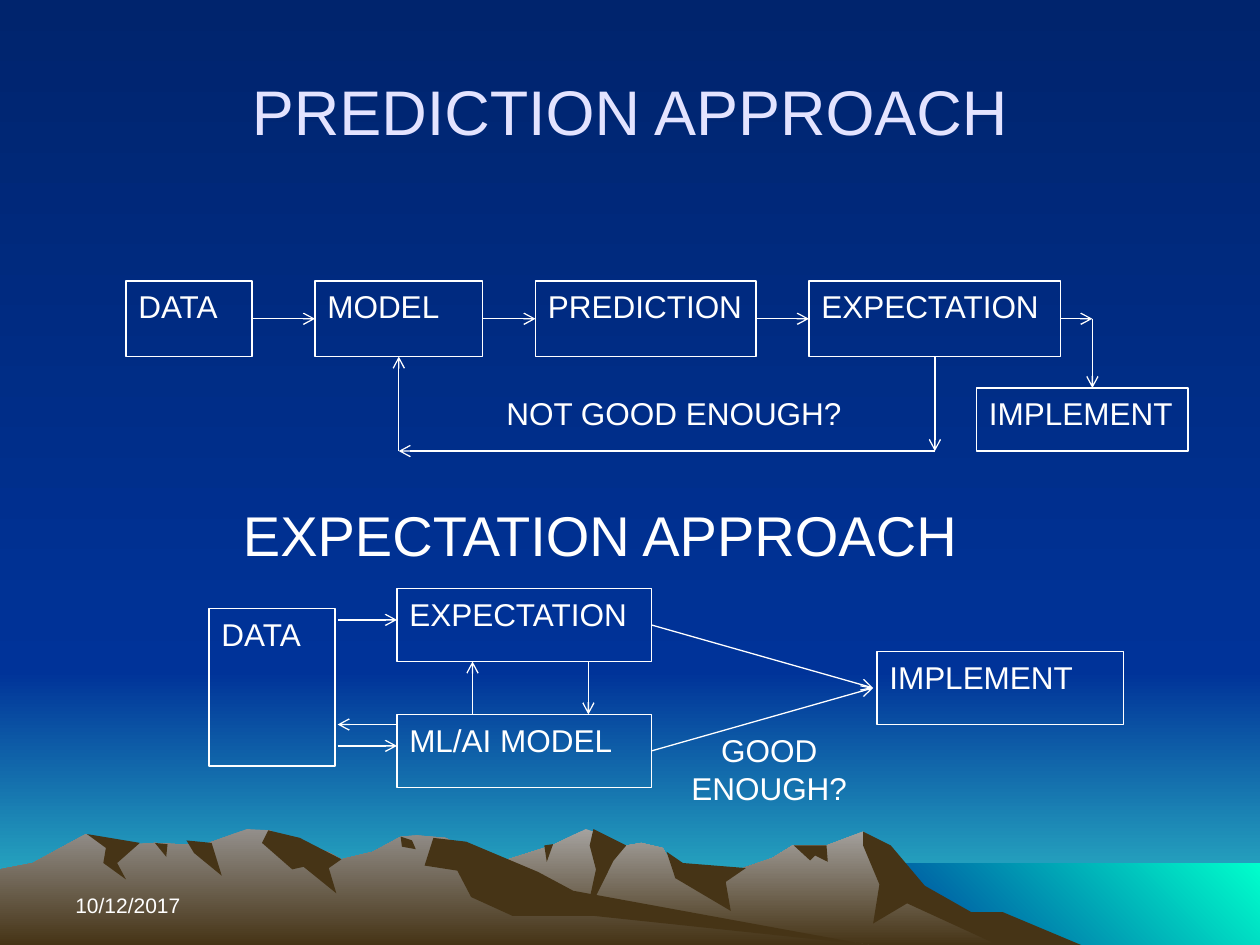
"""Build the slide comparing the prediction and expectation approaches."""
import dataclasses
import itertools

import lxml.etree
import pptx
import pptx.dml.color
import pptx.dml.fill
import pptx.enum.shapes
import pptx.enum.text
import pptx.oxml.ns
import pptx.slide
import pptx.text.text
import pptx.util

Inches = pptx.util.Inches
RGBColor = pptx.dml.color.RGBColor
Align = pptx.enum.text.PP_ALIGN
Anchor = pptx.enum.text.MSO_ANCHOR
Route = pptx.enum.shapes.MSO_CONNECTOR
qn = pptx.oxml.ns.qn
Point = tuple[float, float]

WHITE = RGBColor(0xFF, 0xFF, 0xFF)
LAVENDER = RGBColor(0xE3, 0xE3, 0xFF)
NIGHT = RGBColor(0x00, 0x24, 0x6D)
BLUE = RGBColor(0x00, 0x33, 0x99)
TEAL = RGBColor(0x33, 0xCC, 0xCC)
AQUA = RGBColor(0x00, 0xFF, 0xCC)
STONE = RGBColor(0xA5, 0xA2, 0x9F)
SLATE = RGBColor(0x93, 0x8F, 0x8B)
EARTH = RGBColor(0x46, 0x34, 0x16)
WIDTH, HEIGHT, HORIZON = 10, 7.5, 5.33
DOWNWARD, UP_RIGHT = 270, 45


@dataclasses.dataclass
class Terrain:
    colours: tuple[RGBColor, ...]
    outline: list[Point]
    angle: int = DOWNWARD


@dataclasses.dataclass
class Step:
    name: str
    left: float
    top: float
    width: float
    height: float

    @property
    def right(self) -> float:
        return self.left + self.width

    @property
    def bottom(self) -> float:
        return self.top + self.height

    @property
    def centre(self) -> float:
        return self.left + self.width / 2


@dataclasses.dataclass
class Caption:
    lines: list[str]
    left: float
    top: float
    width: float
    height: float
    size: int = 18
    align: Align = Align.LEFT
    anchor: Anchor = Anchor.TOP


def band(left: float, top: float, bottom: float) -> list[Point]:
    return [(WIDTH, bottom), (left, bottom), (left, top), (WIDTH, top)]


FAR_RIDGE = [
    (2.58, HEIGHT), (3.27, 7.09), (3.94, 6.85), (4.38, 6.71), (4.65, 6.58), (4.74, 6.61),
    (4.86, 6.73), (5.09, 6.69), (5.26, 6.73), (5.36, 6.9), (5.66, 6.97), (6.13, 6.81),
    (6.29, 6.71), (6.56, 6.71), (6.85, 6.6), (7.02, 6.71), (7.23, 6.98), (7.64, 7.23),
    (8.21, HEIGHT)]
NEAR_RIDGE = [
    (0, HEIGHT), (0, 6.9), (0.26, 6.85), (0.68, 6.62), (0.94, 6.71), (1.23, 6.69),
    (1.6, 6.71), (1.96, 6.58), (2.15, 6.59), (2.36, 6.81), (2.6, 6.76), (2.71, 6.82),
    (2.96, 6.76), (3.18, 6.64), (3.31, 6.63), (3.54, 6.65), (4.32, 7.12), (6.9, HEIGHT)]
FAR_SHADOWS = [
    [(6.85, 6.6), (7.07, 6.71), (7.34, 7.03), (7.71, 7.24), (7.96, 7.24), (8.58, HEIGHT),
     (7.92, HEIGHT), (7.2, 7.17), (6.93, 7.33), (6.98, 7.02), (6.85, 6.71)],
    [(4.71, 6.58), (4.97, 6.71), (4.87, 6.83), (4.65, 7.27), (4.73, 6.9), (4.68, 6.71)],
    [(5.29, 6.76), (5.42, 6.85), (5.92, 6.89), (5.76, 7), (5.8, 7.23), (5.36, 6.97)],
    [(6.3, 6.71), (6.56, 6.71), (6.57, 6.84), (6.47, 6.79), (6.43, 6.83)],
    [(4.32, 6.71), (4.39, 6.7), (4.34, 6.84)]]
NEAR_SHADOWS = [
    [(2.13, 6.59), (2.38, 6.65), (2.71, 6.82), (2.61, 6.89), (2.67, 7.09), (2.41, 6.88),
     (2.32, 6.9), (2.08, 6.69)],
    [(3.44, 6.65), (3.7, 6.68), (4.27, 6.92), (4.55, 7.07), (6.9, HEIGHT), (4.72, 7.27),
     (4.07, 7.27), (3.74, 7.12), (3.63, 6.91), (3.37, 6.87)],
    [(3.18, 6.64), (3.27, 6.67), (3.3, 6.74), (3.19, 6.72)],
    [(1.48, 6.67), (1.68, 6.69), (1.76, 6.95), (1.54, 6.77)],
    [(1.23, 6.69), (1.33, 6.7), (1.32, 6.8)],
    [(0.69, 6.62), (1.11, 6.69), (0.93, 6.85), (1, 6.98), (0.82, 6.85), (0.84, 6.73)]]
SCENERY = [
    Terrain((BLUE, TEAL), band(0, HORIZON, HEIGHT)),
    Terrain((NIGHT, BLUE), band(0, 0, HORIZON)),
    Terrain((BLUE, AQUA), band(6.83, 6.85, HEIGHT), UP_RIGHT),
    Terrain((STONE, EARTH), FAR_RIDGE),
    *[Terrain((EARTH,), outline) for outline in FAR_SHADOWS],
    Terrain((SLATE, EARTH), NEAR_RIDGE),
    *[Terrain((EARTH,), outline) for outline in NEAR_SHADOWS],
]
CHAIN = [Step(name, left, 2.23, width, 0.6) for name, left, width in (
    ("DATA", 1, 1), ("MODEL", 2.5, 1.33), ("PREDICTION", 4.25, 1.75), ("EXPECTATION", 6.42, 2))]
RELEASE = Step("IMPLEMENT", 7.75, 3.08, 1.68, 0.5)
SOURCE = Step("DATA", 1.66, 4.83, 1, 1.25)
GOAL, LEARNER = [Step(name, 3.15, top, 2.02, 0.58)
                 for name, top in (("EXPECTATION", 4.67), ("ML/AI MODEL", 5.67))]
OUTCOME = Step("IMPLEMENT", 6.96, 5.17, 1.96, 0.58)
CAPTIONS = [
    Caption(["NOT GOOD ENOUGH?"], 3.92, 3.08, 2.89, 0.4),
    Caption(["EXPECTATION APPROACH"], 1.83, 3.92, 6.05, 0.64, 32),
    Caption(["GOOD", "ENOUGH?"], 5.38, 5.75, 1.45, 0.71, align=Align.CENTER),
    Caption(["10/12/2017"], 0.5, 6.83, 2.33, 0.5, 12, anchor=Anchor.BOTTOM),
]


def write(frame: pptx.text.text.TextFrame, lines: list[str], size: int, align: Align,
          anchor: Anchor, colour: RGBColor = WHITE) -> None:
    frame.vertical_anchor = anchor
    for index, line in enumerate(lines):
        paragraph = frame.add_paragraph() if index else frame.paragraphs[0]
        paragraph.alignment = align
        run = paragraph.add_run()
        run.text = line
        run.font.name, run.font.size = "Arial", pptx.util.Pt(size)
        run.font.color.rgb = colour


def paint(fill: pptx.dml.fill.FillFormat, colours: tuple[RGBColor, ...], angle: int) -> None:
    if len(colours) == 1:
        fill.solid()
        fill.fore_color.rgb = colours[0]
        return
    fill.gradient()
    fill.gradient_angle = angle
    for stop, colour in zip(fill.gradient_stops, colours):
        stop.color.rgb = colour


def draw_terrain(slide: pptx.slide.Slide, terrain: Terrain) -> None:
    first, *rest = [(Inches(x), Inches(y)) for x, y in terrain.outline]
    builder = slide.shapes.build_freeform(*first)
    builder.add_line_segments(rest, close=True)
    land = builder.convert_to_shape()
    land.shadow.inherit = False
    land.line.fill.background()
    paint(land.fill, terrain.colours, terrain.angle)


def draw_step(slide: pptx.slide.Slide, step: Step) -> None:
    area = map(Inches, (step.left, step.top, step.width, step.height))
    box = slide.shapes.add_shape(pptx.enum.shapes.MSO_SHAPE.RECTANGLE, *area)
    box.shadow.inherit = False
    box.fill.background()
    box.line.color.rgb, box.line.width = WHITE, pptx.util.Pt(0.75)
    write(box.text_frame, [step.name], 18, Align.LEFT, Anchor.TOP)


def draw_arrow(slide: pptx.slide.Slide, start: Point, end: Point,
               route: Route = Route.STRAIGHT) -> None:
    link = slide.shapes.add_connector(route, *map(Inches, start + end))
    link.line.color.rgb, link.line.width = WHITE, pptx.util.Pt(0.75)
    properties = link.element.spPr
    lxml.etree.SubElement(properties.find(qn("a:ln")), qn("a:tailEnd"), type="arrow")
    lxml.etree.SubElement(properties, qn("a:effectLst"))


def draw_prediction_arrows(slide: pptx.slide.Slide) -> None:
    _, model, _, expectation = CHAIN
    level, turn = 2.53, 8.67
    for before, after in itertools.pairwise(CHAIN):
        draw_arrow(slide, (before.right, level), (after.left, level))
    draw_arrow(slide, (expectation.right, level), (turn, level))
    draw_arrow(slide, (turn, level), (turn, RELEASE.top))
    corner, back = (expectation.centre, RELEASE.bottom), (model.centre, RELEASE.bottom)
    draw_arrow(slide, (expectation.centre, expectation.bottom), corner)
    draw_arrow(slide, corner, back, Route.ELBOW)
    draw_arrow(slide, back, (model.centre, model.bottom))


def draw_expectation_arrows(slide: pptx.slide.Slide) -> None:
    edge, target = SOURCE.right + 0.02, (6.93, 5.46)
    for level in (4.92, 5.92):
        draw_arrow(slide, (edge, level), (GOAL.left, level))
    draw_arrow(slide, (LEARNER.left, 5.75), (edge, 5.75))
    draw_arrow(slide, (3.75, LEARNER.top), (3.75, GOAL.bottom))
    draw_arrow(slide, (4.67, GOAL.bottom), (4.67, LEARNER.top))
    for step in (GOAL, LEARNER):
        draw_arrow(slide, (step.right, step.top + step.height / 2), target)


def draw_caption(slide: pptx.slide.Slide, caption: Caption) -> None:
    area = map(Inches, (caption.left, caption.top, caption.width, caption.height))
    frame = slide.shapes.add_textbox(*area).text_frame
    frame.word_wrap = caption.anchor == Anchor.BOTTOM
    write(frame, caption.lines, caption.size, caption.align, caption.anchor)


def main() -> None:
    deck = pptx.Presentation()
    deck.slide_width, deck.slide_height = Inches(WIDTH), Inches(HEIGHT)
    slide = deck.slides.add_slide(deck.slide_layouts[5])
    paint(slide.background.fill, (NIGHT, BLUE), DOWNWARD)
    for terrain in SCENERY:
        draw_terrain(slide, terrain)
    heading = slide.shapes.title
    slide.shapes.element.append(heading.element)
    heading.left, heading.top, heading.width, heading.height = map(Inches, (0.5, 0.25, 9, 1.25))
    write(heading.text_frame, ["PREDICTION APPROACH"], 36, Align.CENTER, Anchor.MIDDLE, LAVENDER)
    for step in (*CHAIN, RELEASE, SOURCE, GOAL, LEARNER, OUTCOME):
        draw_step(slide, step)
    draw_prediction_arrows(slide)
    draw_expectation_arrows(slide)
    for caption in CAPTIONS:
        draw_caption(slide, caption)
    deck.save("out.pptx")


if __name__ == "__main__":
    main()
